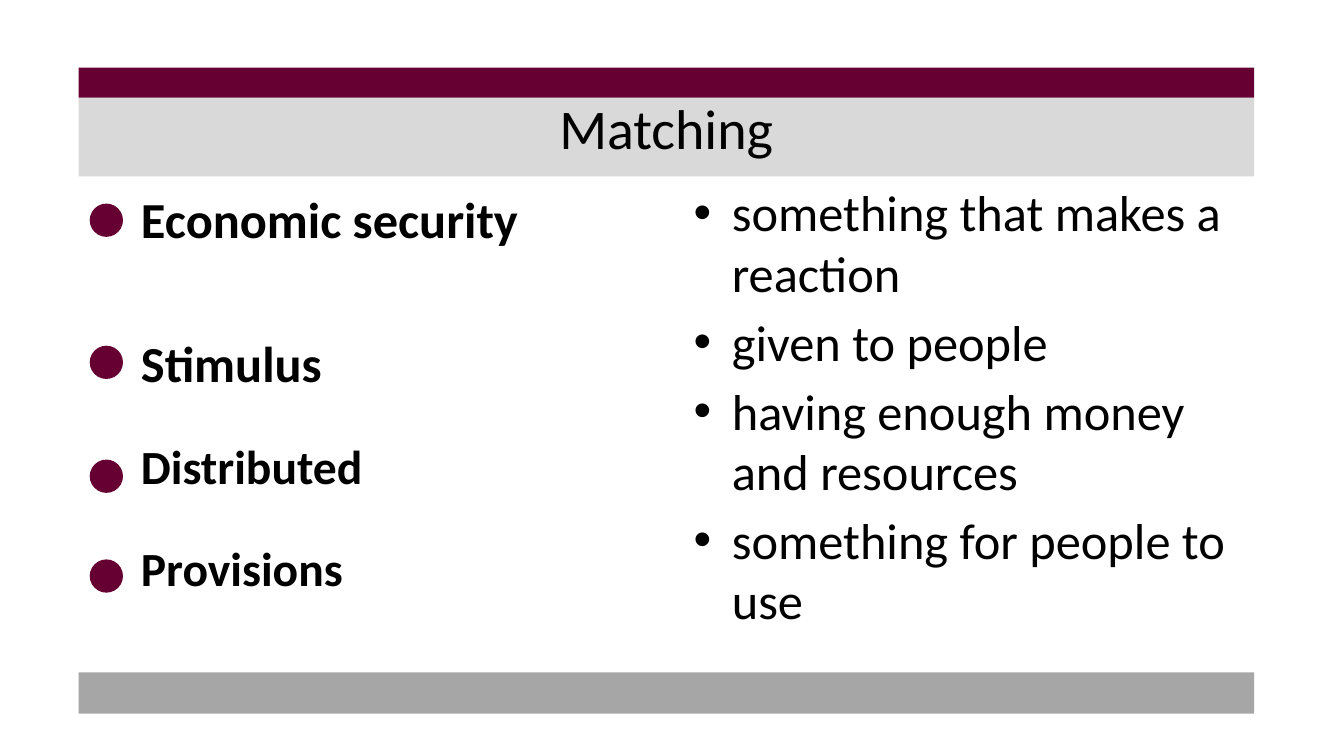
from dataclasses import dataclass

from lxml.etree import SubElement
from pptx import Presentation
from pptx.dml.color import RGBColor
from pptx.enum.shapes import MSO_SHAPE as Preset
from pptx.enum.text import MSO_ANCHOR as Anchor, MSO_AUTO_SIZE as AutoSize, PP_ALIGN as Align
from pptx.oxml.ns import qn
from pptx.slide import Slide
from pptx.util import Inches, Pt

COLORS = {"maroon": "660033", "light": "D9D9D9", "mid": "A6A6A6", "text": "000000"}
FONT = "Calibri"
BAR_LEFT, BAR_WIDTH = 0.78, 11.66
DOT_LEFT, DOT_SIZE = 0.89, 0.33
TERM_LEFT, TERM_WIDTH, TERM_HEIGHT = 1.3, 5.2, 0.7
BULLET_INDENT = 0.38


@dataclass(frozen=True)
class Bar:
    top: float
    height: float
    color: str


@dataclass(frozen=True)
class Term:
    word: str
    top: float
    dot_top: float
    size: int


BARS = [Bar(0.97, 0.78, "light"), Bar(6.67, 0.41, "mid"), Bar(0.67, 0.3, "maroon")]
TERMS = [
    Term("Economic security", 1.82, 2.02, 36),
    Term("Stimulus", 3.25, 3.43, 36),
    Term("Distributed", 4.29, 4.56, 34),
    Term("Provisions", 5.3, 5.55, 34),
]
DEFINITIONS = [
    "something that makes a reaction",
    "given to people",
    "having enough money and resources",
    "something for people to use",
]


def add_filled(slide: Slide, preset: Preset, left: float, top: float,
               width: float, height: float, color: str) -> None:
    shape = slide.shapes.add_shape(
        preset, Inches(left), Inches(top), Inches(width), Inches(height))
    shape.shadow.inherit = False
    shape.fill.solid()
    shape.fill.fore_color.rgb = RGBColor.from_string(COLORS[color])
    shape.line.fill.background()


def write(paragraph, text: str, size: int, bold: bool = False) -> None:
    run = paragraph.add_run()
    run.text = text
    for name, value in {"name": FONT, "size": Pt(size), "bold": bold}.items():
        setattr(run.font, name, value)
    run.font.color.rgb = RGBColor.from_string(COLORS["text"])


def add_text_frame(slide: Slide, left: float, top: float, width: float, height: float):
    frame = slide.shapes.add_textbox(
        Inches(left), Inches(top), Inches(width), Inches(height)).text_frame
    frame.word_wrap = True
    return frame


def add_bullet(paragraph) -> None:
    properties = paragraph._p.get_or_add_pPr()
    properties.set("marL", str(Inches(BULLET_INDENT)))
    properties.set("indent", str(-Inches(BULLET_INDENT)))
    SubElement(properties, qn("a:buFont")).set("typeface", "Arial")
    SubElement(properties, qn("a:buChar")).set("char", "•")


def place_title(slide: Slide, text: str) -> None:
    """Fill the title placeholder and bring it in front of the bars."""
    title = slide.shapes.title
    bounds = {"left": 0.67, "top": 0.3, "width": 12, "height": 1.93}
    for name, value in bounds.items():
        setattr(title, name, Inches(value))
    frame = title.text_frame
    frame.auto_size = AutoSize.NONE
    frame.vertical_anchor = Anchor.MIDDLE
    heading = frame.paragraphs[0]
    heading.alignment = Align.CENTER
    write(heading, text, 40)
    slide.shapes.element.append(title.element)


def add_term(slide: Slide, term: Term) -> None:
    add_filled(slide, Preset.OVAL, DOT_LEFT, term.dot_top, DOT_SIZE, DOT_SIZE, "maroon")
    frame = add_text_frame(slide, TERM_LEFT, term.top, TERM_WIDTH, TERM_HEIGHT)
    write(frame.paragraphs[0], term.word, term.size, bold=True)


def add_definitions(slide: Slide, definitions: list[str]) -> None:
    frame = add_text_frame(slide, 6.78, 1.75, 5.89, 4.95)
    for index, definition in enumerate(definitions):
        paragraph = frame.add_paragraph() if index else frame.paragraphs[0]
        paragraph.space_after = Pt(6)
        add_bullet(paragraph)
        write(paragraph, definition, 36)


def main() -> None:
    deck = Presentation()
    deck.slide_width, deck.slide_height = Inches(13.33), Inches(7.5)
    slide = deck.slides.add_slide(deck.slide_layouts.get_by_name("Title Only"))
    for bar in BARS:
        add_filled(slide, Preset.RECTANGLE, BAR_LEFT, bar.top, BAR_WIDTH, bar.height, bar.color)
    place_title(slide, "Matching ")
    add_definitions(slide, DEFINITIONS)
    for term in TERMS:
        add_term(slide, term)
    deck.save("out.pptx")


if __name__ == "__main__":
    main()
